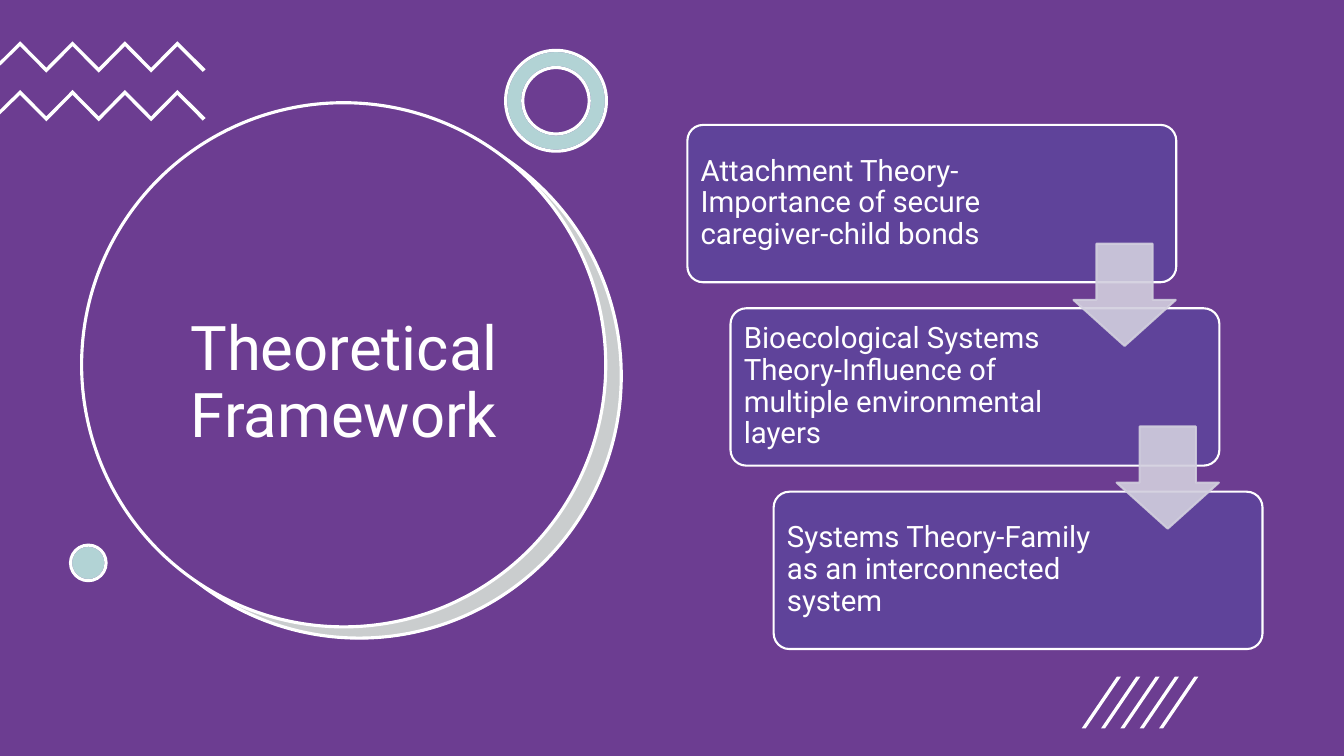
from dataclasses import dataclass
from typing import Optional

from lxml.etree import SubElement
from pptx import Presentation
from pptx.dml.color import RGBColor
from pptx.enum.shapes import MSO_SHAPE as Shp
from pptx.enum.text import MSO_ANCHOR, MSO_AUTO_SIZE, PP_ALIGN
from pptx.oxml.ns import qn
from pptx.util import Pt

PURPLE = RGBColor(0x6C, 0x3D, 0x91)
INDIGO = RGBColor(0x5F, 0x43, 0x9A)
LAVENDER = RGBColor(0xD2, 0xCF, 0xDE)
TEAL = RGBColor(0x03, 0x6F, 0x77)
SLATE = RGBColor(0x52, 0x5A, 0x60)
WHITE = RGBColor(0xFF, 0xFF, 0xFF)
FONT = "Roboto"
WIDTH, HEIGHT = 960, 540


@dataclass
class Figure:
    kind: Shp
    x: float
    y: float
    w: float
    h: float
    fill: RGBColor
    line: Optional[RGBColor] = None
    line_width: float = 2.25
    adjust: tuple[float, ...] = ()
    opacity: int = 100
    line_opacity: int = 100


def set_opacity(sp, fill_tag: str, percent: int) -> None:
    if percent < 100:
        color = sp.element.spPr.find(f"{fill_tag}/{qn('a:srgbClr')}")
        SubElement(color, qn("a:alpha")).set("val", str(percent * 1000))


def draw_figure(s, f: Figure):
    sp = s.shapes.add_shape(f.kind, Pt(f.x), Pt(f.y), Pt(f.w), Pt(f.h))
    sp.shadow.inherit = False
    for i, value in enumerate(f.adjust):
        sp.adjustments[i] = value
    sp.fill.solid()
    sp.fill.fore_color.rgb = f.fill
    set_opacity(sp, qn("a:solidFill"), f.opacity)
    if f.line is None:
        sp.line.fill.background()
    else:
        sp.line.color.rgb = f.line
        sp.line.width = Pt(f.line_width)
        set_opacity(sp, f"{qn('a:ln')}/{qn('a:solidFill')}", f.line_opacity)
    return sp


def draw_outline(s, points: list[tuple[float, float]]) -> None:
    corners = [(Pt(x), Pt(y)) for x, y in points]
    builder = s.shapes.build_freeform(*corners[0])
    builder.add_line_segments(corners[1:], close=True)
    sp = builder.convert_to_shape()
    sp.shadow.inherit = False
    sp.fill.solid()
    sp.fill.fore_color.rgb = WHITE
    sp.line.fill.background()


def write_text(sp, text: str, size: float, align: PP_ALIGN) -> None:
    tf = sp.text_frame
    tf.text = text
    tf.word_wrap = True
    tf.auto_size = MSO_AUTO_SIZE.NONE
    tf.vertical_anchor = MSO_ANCHOR.MIDDLE
    p = tf.paragraphs[0]
    p.alignment = align
    p.line_spacing = 0.9
    font = p.runs[0].font
    font.name, font.size, font.color.rgb = FONT, Pt(size), WHITE


def draw_zigzag(s, top: float) -> None:
    upper = [(14.4 + 18.72 * i, top + 18.9 * (i % 2)) for i in range(7)]
    lower = [(x, y + 3.5) for x, y in reversed(upper)]
    right_end = [(146.9, top + 20), (144.9, top + 21.9)]
    left_end = [(0, top + 17.5), (0, top + 14.3)]
    draw_outline(s, upper + right_end + lower + left_end)


def draw_slash(s, x: float) -> None:
    top, bottom = 483.3, 520.3
    draw_outline(s, [(x + 2.9, bottom), (x, bottom), (x + 25.2, top), (x + 28.1, top)])


@dataclass
class Theory:
    text: str
    text_width: float


THEORIES = [
    Theory("Attachment Theory-Importance of secure caregiver-child bonds", 228.2),
    Theory("Bioecological Systems Theory-Influence of multiple environmental layers", 239),
    Theory("Systems Theory-Family as an interconnected system", 239),
]
CARD_X, CARD_Y, CARD_W, CARD_H = 491, 89.2, 349.2, 112.4
STEP_X, STEP_Y = 30.8, 131
CIRCLE = 374.4

BACKDROP = [
    Figure(Shp.RECTANGLE, 0, 0, WIDTH, HEIGHT, PURPLE),
    Figure(Shp.OVAL, 69.8, 82.1, CIRCLE, CIRCLE, WHITE),
    Figure(Shp.OVAL, 69.4, 81.4, CIRCLE, CIRCLE, SLATE, WHITE, opacity=30),
    Figure(Shp.OVAL, 58.3, 73.4, CIRCLE, CIRCLE, PURPLE, WHITE),
]
# White underlay first, translucent teal above it
ACCENTS = [
    Figure(kind, x, y, size, size, fill, line, adjust=adjust, opacity=opacity)
    for kind, x, y, size, adjust in [
        (Shp.DONUT, 361.2, 36, 72, (0.17,)),
        (Shp.OVAL, 50.4, 389.4, 25.4, ()),
    ]
    for fill, line, opacity in [(WHITE, PURPLE, 100), (TEAL, WHITE, 30)]
]


def main() -> None:
    prs = Presentation()
    prs.slide_width, prs.slide_height = Pt(WIDTH), Pt(HEIGHT)
    s = prs.slides.add_slide(prs.slide_layouts[5])

    # Background and large circle
    for figure in BACKDROP:
        circle = draw_figure(s, figure)

    # Title, brought in front of the circle
    title = s.shapes.title
    title.left, title.top, title.width, title.height = Pt(87.1), Pt(147.6), Pt(317.5), Pt(253.4)
    write_text(title, "Theoretical Framework", 44, PP_ALIGN.CENTER)
    circle.element.addnext(title.element)

    # Zigzags, ring and dot
    for top in (29.5, 64.3):
        draw_zigzag(s, top)
    for figure in ACCENTS:
        draw_figure(s, figure)

    # Staggered theory cards
    for i, theory in enumerate(THEORIES):
        x, y = CARD_X + i * STEP_X, CARD_Y + i * STEP_Y
        draw_figure(s, Figure(Shp.ROUNDED_RECTANGLE, x, y, CARD_W, CARD_H,
                              INDIGO, WHITE, 1.5, (0.1,)))
        box = s.shapes.add_textbox(Pt(x + 3.2), Pt(y + 3.2), Pt(theory.text_width), Pt(105.8))
        tf = box.text_frame
        tf.margin_left = tf.margin_right = tf.margin_top = tf.margin_bottom = Pt(6.3)
        write_text(box, theory.text, 21, PP_ALIGN.LEFT)

    # Arrows from each card to the next
    for i in range(len(THEORIES) - 1):
        draw_figure(s, Figure(Shp.DOWN_ARROW, 766.8 + i * STEP_X, 174.1 + i * 130.5, 73, 73,
                              LAVENDER, LAVENDER, 1.5, (0.55, 0.45), 90, 90))

    # Slashes
    for i in range(5):
        draw_slash(s, 772.6 + i * 13.82)

    prs.save("out.pptx")


if __name__ == "__main__":
    main()
